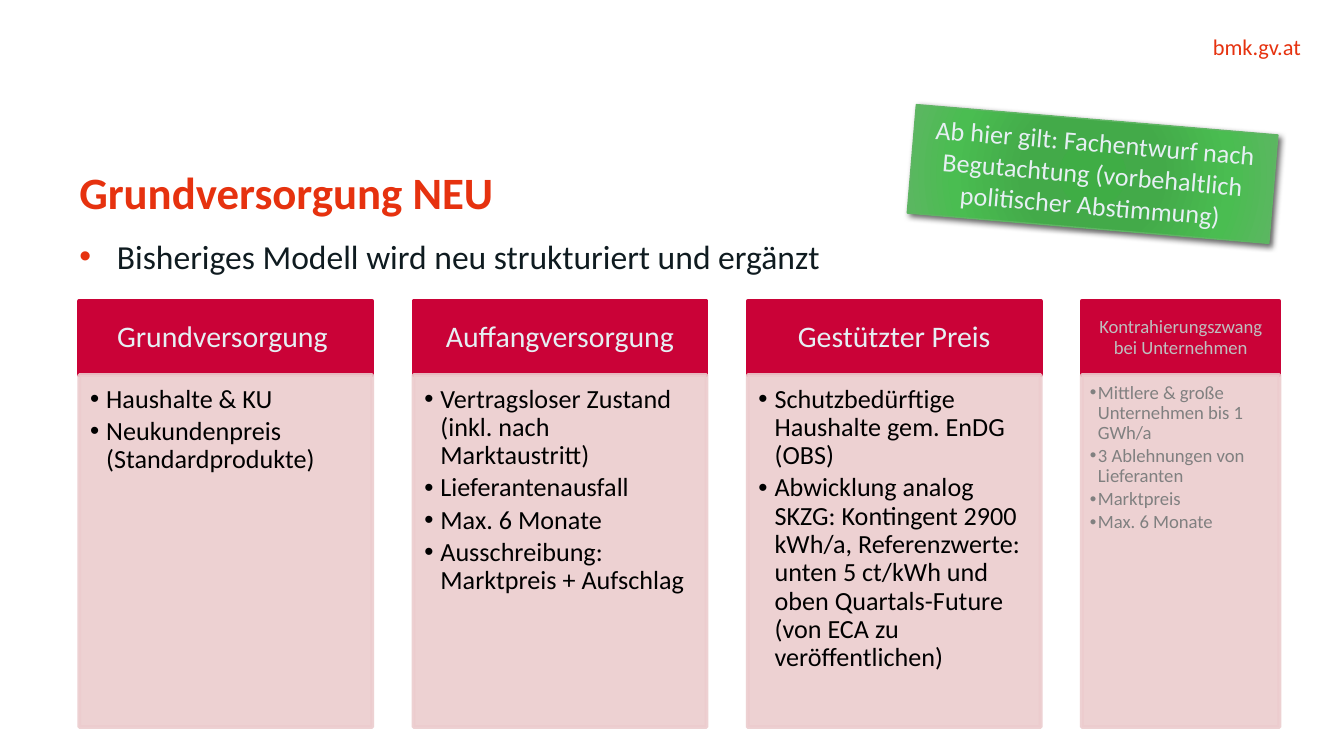
from lxml import etree
from pptx import Presentation
from pptx.dml.color import RGBColor
from pptx.enum.shapes import MSO_SHAPE as SHAPE
from pptx.enum.text import MSO_ANCHOR as ANCHOR, PP_ALIGN as ALIGN
from pptx.oxml import parse_xml
from pptx.oxml.ns import nsdecls, qn
from pptx.util import Inches, Pt

RED, CRIMSON, PINK, PALE = "E6320F", "CA0237", "ECCCCE", "E6EFF3"
GREEN_EDGE = "5FB564"
LEFT, RIGHT, COL_W, LAST_W = 0.59, 9.52, 2.18, 1.47
PITCH = (RIGHT - LEFT - LAST_W) / 3
HEAD_Y, HEAD_H, BODY_H = 2.24, 0.55, 2.62


def add_block(x, y, w, h, texts, size, color, fill=None, line=None, line_w=2.08,
              alpha=None, insets=(0, 0, 0, 0), align=ALIGN.LEFT, anchor=ANCHOR.TOP,
              bold=False, wrap=True, spacing=1.0, after=0, indent=0, bullet_color=None):
    """Add a text box, or a rectangle if a fill is given; an indent makes bullets."""
    box = [Inches(v) for v in (x, y, w, h)]
    if fill:
        sp = s.shapes.add_shape(SHAPE.RECTANGLE, *box)
        sp.shadow.inherit = False
        sp.fill.solid()
        sp.fill.fore_color.rgb = RGBColor.from_string(fill)
        sp.line.color.rgb = RGBColor.from_string(line or fill)
        sp.line.width = Pt(line_w)
        if alpha:
            for clr in sp._element.spPr.iter(qn("a:srgbClr")):
                etree.SubElement(clr, qn("a:alpha")).set("val", str(alpha * 1000))
    else:
        sp = s.shapes.add_textbox(*box)
    tf = sp.text_frame
    tf.word_wrap = wrap
    tf.vertical_anchor = anchor
    tf.margin_left, tf.margin_top, tf.margin_right, tf.margin_bottom = map(Inches, insets)
    for i, text in enumerate(texts):
        p = tf.paragraphs[0] if i == 0 else tf.add_paragraph()
        p.alignment = align
        p.line_spacing = spacing
        p.space_after = Pt(after)
        if indent:
            pPr = p._p.get_or_add_pPr()
            pPr.set("marL", str(Inches(indent)))
            pPr.set("indent", str(-Inches(indent)))
            bu_clr = etree.SubElement(pPr, qn("a:buClr"))
            etree.SubElement(bu_clr, qn("a:srgbClr")).set("val", bullet_color or color)
            etree.SubElement(pPr, qn("a:buFont")).set("typeface", "Arial")
            etree.SubElement(pPr, qn("a:buChar")).set("char", "•")
        r = p.add_run()
        r.text = text
        r.font.name = "Calibri"
        r.font.size = Pt(size)
        r.font.bold = bold
        r.font.color.rgb = RGBColor.from_string(color)
    return sp


prs = Presentation()
prs.slide_width = Inches(10)
prs.slide_height = prs.slide_width * 9 // 16
s = prs.slides.add_slide(prs.slide_layouts[6])

add_block(7.27, 0.25, 2.41, 0.2, ["bmk.gv.at"], 12, RED, align=ALIGN.RIGHT)

columns = [
    ("Grundversorgung ", ["Haushalte & KU", "Neukundenpreis (Standardprodukte)"]),
    ("Auffangversorgung", [
        "Vertragsloser Zustand (inkl. nach Marktaustritt)",
        "Lieferantenausfall",
        "Max. 6 Monate",
        "Ausschreibung: Marktpreis + Aufschlag"]),
    ("Gestützter Preis", [
        "Schutzbedürftige Haushalte gem. EnDG (OBS)",
        "Abwicklung analog SKZG: Kontingent 2900 kWh/a, Referenzwerte: unten 5 ct/kWh "
        "und oben Quartals-Future (von ECA zu veröffentlichen)"]),
    ("Kontrahierungszwang bei Unternehmen", [
        "Mittlere & große Unternehmen bis 1 GWh/a",
        "3 Ablehnungen von Lieferanten",
        "Marktpreis",
        "Max. 6 Monate"]),
]
main_style = dict(
    w=COL_W,
    head=dict(size=16, color=PALE, insets=(0.12, 0.07, 0.12, 0.07)),
    body=dict(size=14, color="000000", insets=(0.08, 0.08, 0.11, 0.12), indent=0.12, after=2.1))
side_style = dict(
    w=LAST_W,
    head=dict(size=10, color="BFBFBF", insets=(0.08, 0.04, 0.08, 0.04)),
    body=dict(size=10, color="808080", insets=(0.06, 0.06, 0.08, 0.09), indent=0.06, after=1.5))

for i, (heading, points) in enumerate(columns):
    style = side_style if i == len(columns) - 1 else main_style
    x, w = LEFT + i * PITCH, style["w"]
    add_block(x, HEAD_Y, w, HEAD_H, [heading], fill=CRIMSON, align=ALIGN.CENTER,
              anchor=ANCHOR.MIDDLE, spacing=0.9, **style["head"])
    add_block(x, HEAD_Y + HEAD_H, w, BODY_H, points, fill=PINK, alpha=90,
              spacing=0.9, **style["body"])

add_block(LEFT, 1.72, 8.73, 1.56, ["Bisheriges Modell wird neu strukturiert und ergänzt"],
          18, "0F1B20", spacing=Pt(24), indent=0.28, bullet_color=RED)
add_block(LEFT, 1.21, 8.73, 0.5, ["Grundversorgung NEU"], 24, RED, bold=True,
          wrap=False, spacing=Pt(30))

banner = add_block(
    6.78, 0.89, 2.7, 0.81,
    ["Ab hier gilt: Fachentwurf nach Begutachtung (vorbehaltlich politischer Abstimmung)"],
    14, PALE, fill=GREEN_EDGE, line_w=0.75, insets=(0.1, 0.05, 0.1, 0.05), align=ALIGN.CENTER)
banner.rotation = 4.8
spPr = banner._element.spPr
stops = [(0, "3FAD45"), (34, "43AA49"), (70, "4ABD51"), (100, GREEN_EDGE)]
stop_xml = "".join(f'<a:gs pos="{pos * 1000}"><a:srgbClr val="{c}"/></a:gs>' for pos, c in stops)
spPr.replace(spPr.find(qn("a:solidFill")), parse_xml(
    f'<a:gradFill {nsdecls("a")} rotWithShape="1"><a:gsLst>{stop_xml}</a:gsLst>'
    '<a:path path="circle"><a:fillToRect l="100000" t="100000" r="100000" b="100000"/></a:path>'
    '</a:gradFill>'))
spPr.find(qn("a:effectLst")).append(parse_xml(
    f'<a:outerShdw {nsdecls("a")} blurRad="{Pt(3)}" dist="{Pt(2)}" dir="2700000" '
    'rotWithShape="0"><a:srgbClr val="000000"><a:alpha val="60000"/></a:srgbClr></a:outerShdw>'))

prs.save("out.pptx")
